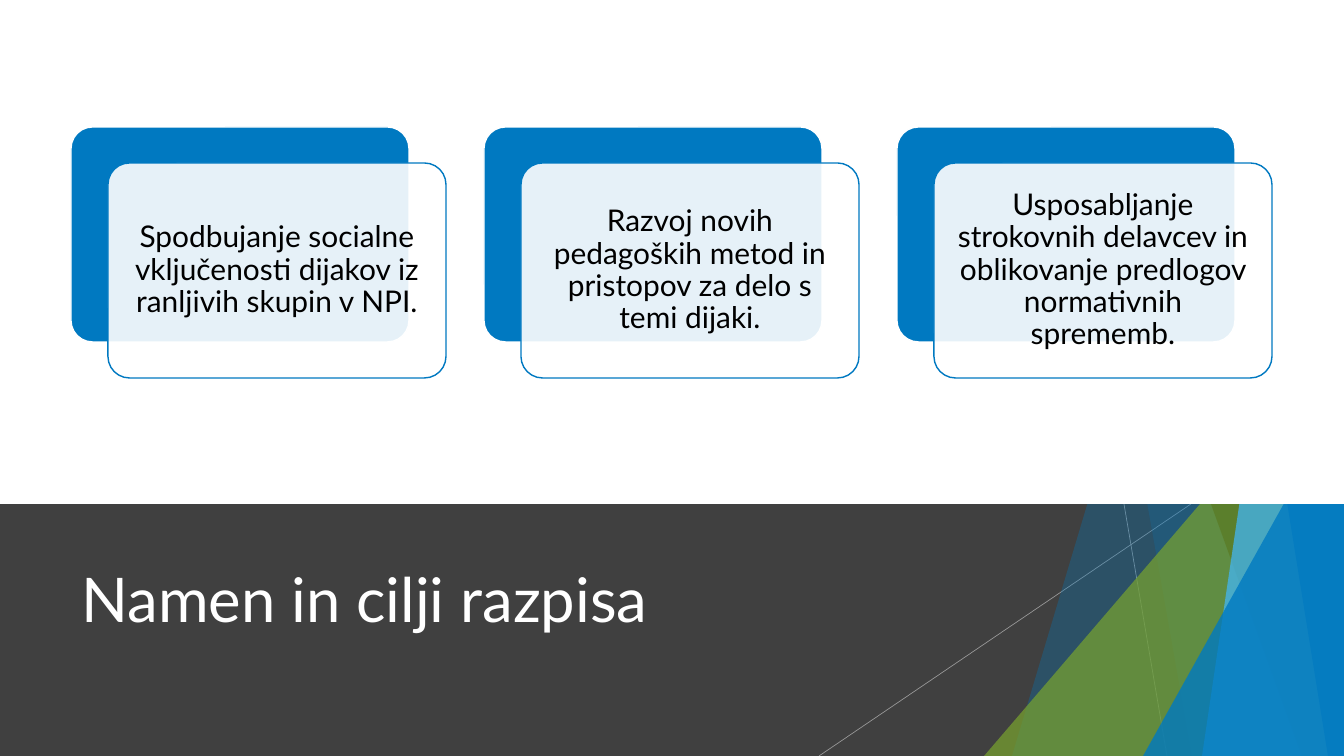
from lxml import etree
from pptx import Presentation
from pptx.dml.color import RGBColor
from pptx.enum.shapes import MSO_CONNECTOR, MSO_SHAPE
from pptx.enum.text import MSO_ANCHOR, PP_ALIGN
from pptx.oxml.ns import qn
from pptx.util import Pt

PX = 13607.14  # EMU per px: 67.2 px to the inch
WIDTH, HEIGHT, BAND_TOP = 1344, 756, 504
FONT = "Lato"

WHITE = RGBColor(0xFF, 0xFF, 0xFF)
BLACK = RGBColor(0x00, 0x00, 0x00)
CHARCOAL = RGBColor(0x40, 0x40, 0x40)
SILVER = RGBColor(0xBF, 0xBF, 0xBF)
BLUE = RGBColor(0x00, 0x79, 0xC1)
SKY = RGBColor(0x41, 0xB8, 0xFF)
GREEN = RGBColor(0x78, 0xA2, 0x2F)
DARK_GREEN = RGBColor(0x5A, 0x7A, 0x23)

RECTANGLE = MSO_SHAPE.RECTANGLE
ROUNDED = MSO_SHAPE.ROUNDED_RECTANGLE
TRIANGLE = MSO_SHAPE.ISOSCELES_TRIANGLE
STRAIGHT = MSO_CONNECTOR.STRAIGHT
MIDDLE = MSO_ANCHOR.MIDDLE
CENTER = PP_ALIGN.CENTER

presentation = Presentation()
presentation.slide_width = round(WIDTH * PX)
presentation.slide_height = round(HEIGHT * PX)
slide = presentation.slides.add_slide(presentation.slide_layouts[6])
shapes = slide.shapes


def paint(shape, color, opacity=100, outline=None):
    shape.shadow.inherit = False
    shape.fill.solid()
    shape.fill.fore_color.rgb = color
    if opacity < 100:
        solid = shape.fill._xPr.find(qn("a:solidFill"))
        etree.SubElement(solid[0], qn("a:alpha"), val=str(opacity * 1000))
    if outline is None:
        shape.line.fill.background()
    else:
        shape.line.color.rgb = outline
        shape.line.width = Pt(1.5)


def add_text(box, text, size, color):
    left, top, width, height = [round(value * PX) for value in box]
    frame = shapes.add_textbox(left, top, width, height).text_frame
    frame.word_wrap = True
    frame.vertical_anchor = MIDDLE
    paragraph = frame.paragraphs[0]
    run = paragraph.add_run()
    run.text = text
    run.font.name = FONT
    run.font.size = Pt(size)
    run.font.color.rgb = color
    return frame


# Dark title band
band = shapes.add_shape(RECTANGLE, 0, round(BAND_TOP * PX), round(WIDTH * PX),
                        round((HEIGHT - BAND_TOP) * PX))
paint(band, CHARCOAL)

# Thin crossing lines
for start_x, end_x in [(1124, 1167), (1191, 819)]:
    line = shapes.add_connector(STRAIGHT, round(start_x * PX), round(BAND_TOP * PX),
                                round(end_x * PX), round(HEIGHT * PX))
    line.line.color.rgb = SILVER
    line.line.width = Pt(0.75)
    solid = line.line.fill._xPr.find(qn("a:solidFill"))
    etree.SubElement(solid[0], qn("a:alpha"), val="70000")
    etree.SubElement(line._element.spPr, qn("a:effectLst"))

# Facets against the right edge: a slanted panel runs from its top x to its
# bottom x, a triangle from its top y to its bottom-left x
facets = [
    ("panel", 1238, 1012, BLUE, 30),
    ("panel", 1058, 1192, BLUE, 20),
    ("triangle", 336, 984, GREEN, 72),
    ("panel", 1029, 1302, DARK_GREEN, 70),
    ("panel", 1314, 1202, SKY, 70),
    ("panel", 1206, 1328, BLUE, 65),
    ("triangle", 396, 1143, BLUE, 80),
]
for kind, start, bottom_x, color, opacity in facets:
    if kind == "panel":
        builder = shapes.build_freeform(start, 0, scale=PX)
        builder.add_line_segments([(WIDTH, 0), (WIDTH, HEIGHT), (bottom_x, HEIGHT)])
        facet = builder.convert_to_shape()
    else:
        facet = shapes.add_shape(TRIANGLE, round(bottom_x * PX), round(start * PX),
                                 round((WIDTH - bottom_x) * PX),
                                 round((HEIGHT - start) * PX))
        facet.adjustments[0] = 1
    paint(facet, color, opacity)

# Title
add_text((75, 525, 948, 146), "Namen in cilji razpisa", 66, WHITE)

# White upper area, hiding the tops of the facets
upper_area = shapes.add_shape(RECTANGLE, 0, 0, round(WIDTH * PX), round(BAND_TOP * PX))
paint(upper_area, WHITE)

# Three goal cards, each a blue back and a translucent front
CARD_LEFT, CARD_TOP, CARD_WIDTH, CARD_HEIGHT, CARD_PITCH = 71, 127, 338, 215, 413
FRONT_X, FRONT_Y, TEXT_INSET = 37, 36, 6
goals = [
    "Spodbujanje socialne vključenosti dijakov iz ranljivih skupin v NPI.",
    "Razvoj novih pedagoških metod in pristopov za delo s temi dijaki.",
    "Usposabljanje strokovnih delavcev in oblikovanje predlogov normativnih sprememb.",
]
for index, goal in enumerate(goals):
    left = CARD_LEFT + index * CARD_PITCH
    front_left, front_top = left + FRONT_X, CARD_TOP + FRONT_Y
    for x, y, color, opacity, outline in [
        (left, CARD_TOP, BLUE, 100, WHITE),
        (front_left, front_top, WHITE, 90, BLUE),
    ]:
        card = shapes.add_shape(ROUNDED, round(x * PX), round(y * PX),
                                round(CARD_WIDTH * PX), round(CARD_HEIGHT * PX))
        card.adjustments[0] = 0.1
        paint(card, color, opacity, outline)

    frame = add_text((front_left + TEXT_INSET, front_top + TEXT_INSET,
                      CARD_WIDTH - 2 * TEXT_INSET, CARD_HEIGHT - 2 * TEXT_INSET),
                     goal, 32, BLACK)
    frame.margin_left = frame.margin_right = round(9 * PX)
    frame.margin_top = frame.margin_bottom = round(9 * PX)
    frame.paragraphs[0].alignment = CENTER
    frame.paragraphs[0].line_spacing = 0.9

presentation.save("out.pptx")
